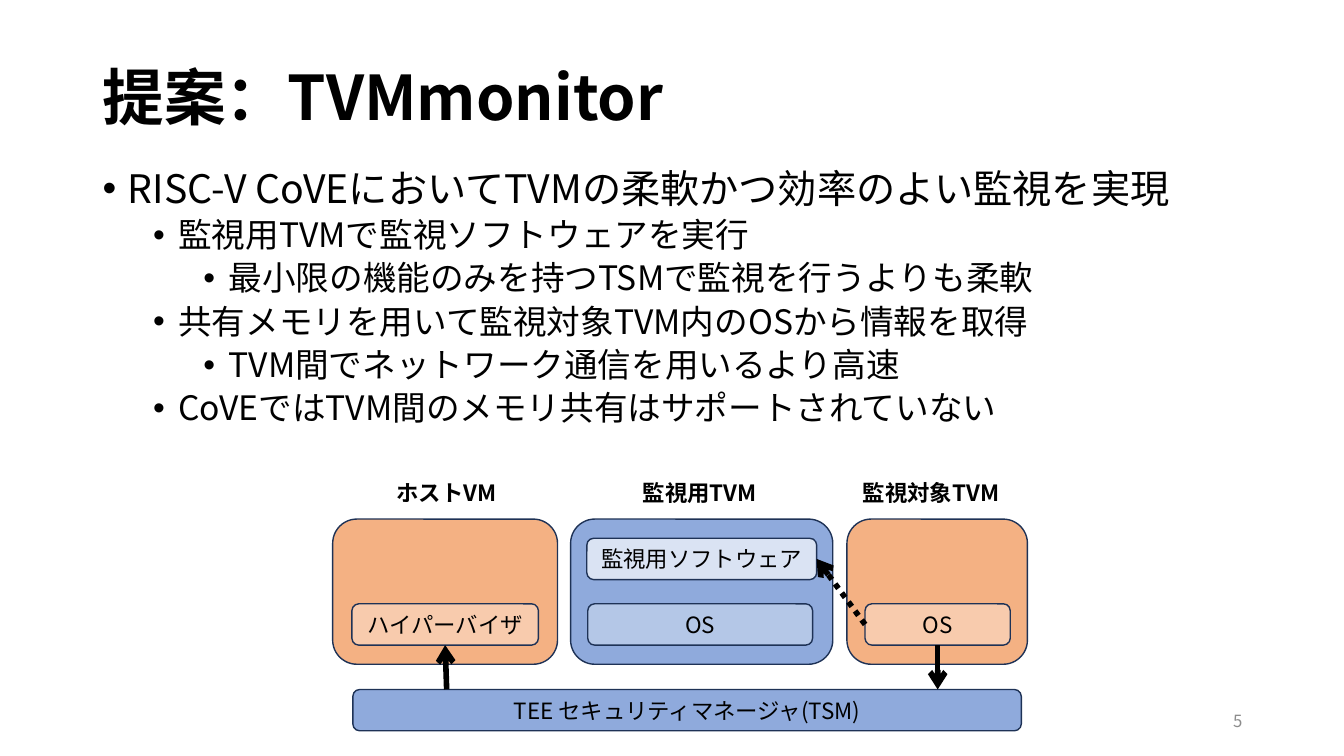
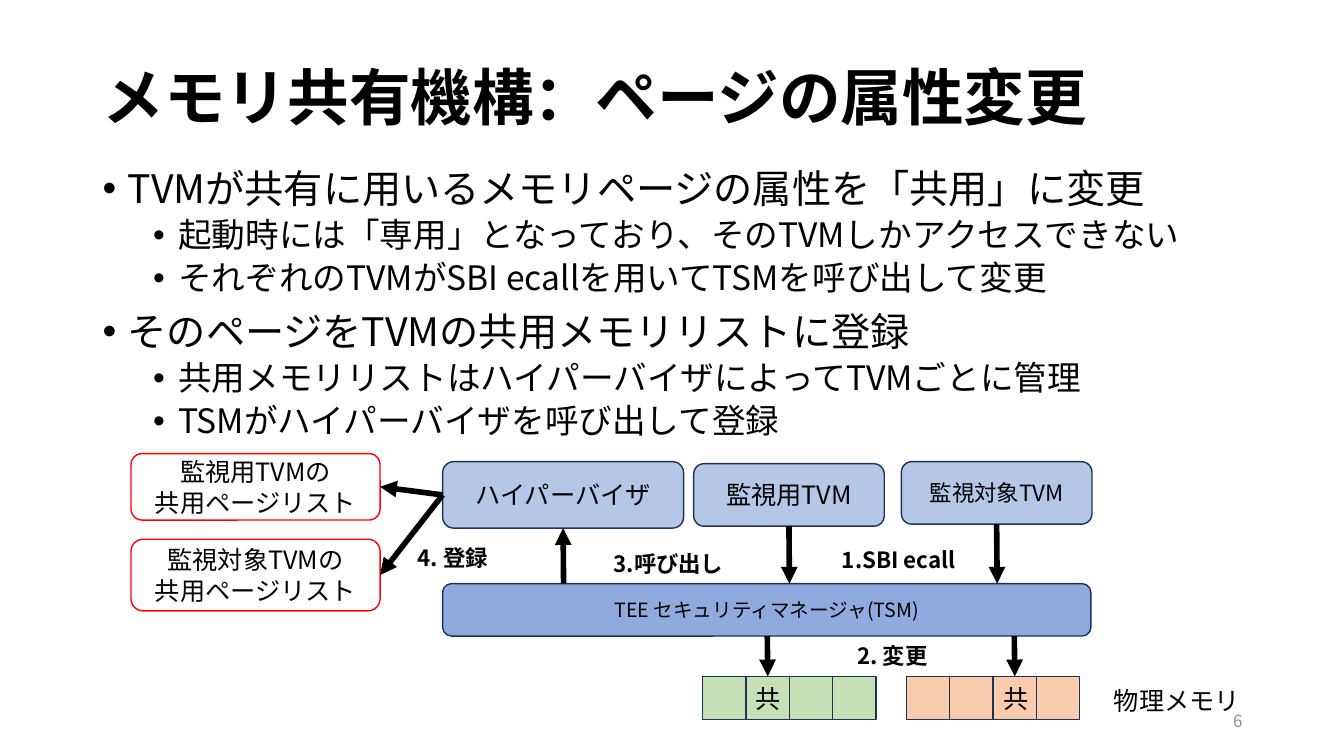
from lxml.etree import SubElement
from pptx import Presentation
from pptx.dml.color import RGBColor
from pptx.enum.dml import MSO_LINE_DASH_STYLE as DASH
from pptx.enum.shapes import MSO_CONNECTOR as CONNECTOR, MSO_SHAPE as SHAPE
from pptx.enum.text import MSO_ANCHOR as ANCHOR, PP_ALIGN as ALIGN
from pptx.oxml.ns import qn
from pptx.util import Inches, Pt

TOP, LEFT, BOTTOM, RIGHT = range(4)  # connection sites of a rectangle


def color(value):
    return RGBColor.from_string(value)


class Deck:
    FONT = "Noto Sans CJK JP"
    BLACK, GRAY, WHITE, RED, NAVY = "000000", "8C8C8C", "FFFFFF", "FF0000", "1E3256"
    BLUE, LIGHT_BLUE, PALE_BLUE = "8FAADC", "B4C7E7", "DAE3F3"
    ORANGE, LIGHT_ORANGE, GREEN = "F4B183", "F8CBAD", "C5E0B4"
    BODY_LEVELS = [(28, 10), (24, 5), (24, 5)]  # size, space before

    def __init__(self):
        self.presentation = Presentation()
        self.presentation.slide_width = Inches(13.33)
        self.presentation.slide_height = Inches(7.5)
        self.slide = None

    def new_slide(self, title, body, number):
        """Start a slide with its title, bullets and page number."""
        layout = self.presentation.slide_layouts[6]
        self.slide = self.presentation.slides.add_slide(layout)
        heading = self.text((0.92, 0.56, 11.5, 0.88), title, 44, bold=True,
                            align=ALIGN.LEFT, anchor=ANCHOR.MIDDLE)
        heading.text_frame.paragraphs[0].line_spacing = 0.9
        self.bullets(body)
        self.text((9.42, 6.95, 3, 0.4), str(number), 12, fill=self.GRAY,
                  align=ALIGN.RIGHT, anchor=ANCHOR.MIDDLE)

    def style(self, paragraph, size, bold, fill):
        values = {"name": self.FONT, "size": Pt(size), "bold": bold}
        for run in paragraph.runs:
            for name, value in values.items():
                setattr(run.font, name, value)
            run.font.color.rgb = color(fill)
            SubElement(run._r.get_or_add_rPr(), qn("a:ea"), typeface=self.FONT)

    def set_text(self, shape, content, size, bold=False, fill=BLACK,
                 align=ALIGN.CENTER, anchor=ANCHOR.MIDDLE):
        frame = shape.text_frame
        for name, value in {"text": content, "word_wrap": True,
                            "vertical_anchor": anchor}.items():
            setattr(frame, name, value)
        for paragraph in frame.paragraphs:
            paragraph.alignment = align
            self.style(paragraph, size, bold, fill)

    def text(self, box, content, size=16, anchor=ANCHOR.TOP, **format_values):
        shape = self.slide.shapes.add_textbox(*map(Inches, box))
        self.set_text(shape, content, size, anchor=anchor, **format_values)
        return shape

    def label(self, box, content):
        return self.text(box, content, bold=True)

    def bullets(self, items):
        """Add (level, text) pairs as a bulleted outline."""
        shape = self.text((0.92, 1.63, 11.5, 5.12),
                          "\n".join(content for _, content in items),
                          align=ALIGN.LEFT)
        for paragraph, (level, _) in zip(shape.text_frame.paragraphs, items):
            size, space = self.BODY_LEVELS[level]
            for name, value in {"level": level, "line_spacing": 0.9,
                                "space_before": Pt(space)}.items():
                setattr(paragraph, name, value)
            for run in paragraph.runs:
                run.font.size = Pt(size)
            properties = paragraph._p.get_or_add_pPr()
            properties.set("marL", str(Inches(0.25 + 0.5 * level)))
            properties.set("indent", str(Inches(-0.25)))
            SubElement(properties, qn("a:buFont"), typeface="Arial")
            SubElement(properties, qn("a:buChar"), char="•")

    def box(self, box, fill, content="", size=16, line=NAVY,
            kind=SHAPE.ROUNDED_RECTANGLE):
        shape = self.slide.shapes.add_shape(kind, *map(Inches, box))
        shape.shadow.inherit = False
        shape.fill.solid()
        shape.fill.fore_color.rgb = color(fill)
        shape.line.color.rgb = color(line)
        shape.line.width = Pt(1)
        if content:
            self.set_text(shape, content, size)
        return shape

    def point(self, end):
        """Position of an (x, y) pair in inches or a (shape, site) pair."""
        first, second = end
        if isinstance(first, (int, float)):
            return Inches(first), Inches(second)
        middle_x = first.left + first.width // 2
        middle_y = first.top + first.height // 2
        return {TOP: (middle_x, first.top),
                LEFT: (first.left, middle_y),
                BOTTOM: (middle_x, first.top + first.height),
                RIGHT: (first.left + first.width, middle_y)}[second]

    def arrow(self, start, end, head="triangle", dash=None):
        connector = self.slide.shapes.add_connector(
            CONNECTOR.STRAIGHT, *self.point(start), *self.point(end))
        for pair, connect in ((start, connector.begin_connect),
                              (end, connector.end_connect)):
            if not isinstance(pair[0], (int, float)):
                connect(*pair)
        line = connector.line
        line.color.rgb = color(self.BLACK)
        line.width = Pt(4)
        if dash:
            line.dash_style = dash
        properties = connector._element.spPr
        SubElement(properties.find(qn("a:ln")), qn("a:tailEnd"), type=head)
        SubElement(properties, qn("a:effectLst"))

    def memory(self, left, fill, shared):
        """Draw four pages in a row and return the shared one."""
        side = 0.43
        pages = [self.box((left + side * index, 6.71, side, side), fill,
                          "共" if index == shared else "", 18,
                          kind=SHAPE.RECTANGLE) for index in range(4)]
        return pages[shared]


def proposal(deck):
    deck.new_slide("提案：TVMmonitor", [
        (0, "RISC-V CoVEにおいてTVMの柔軟かつ効率のよい監視を実現"),
        (1, "監視用TVMで監視ソフトウェアを実行"),
        (2, "最小限の機能のみを持つTSMで監視を行うよりも柔軟"),
        (1, "共有メモリを用いて監視対象TVM内のOSから情報を取得"),
        (2, "TVM間でネットワーク通信を用いるより高速"),
        (1, "CoVEではTVM間のメモリ共有はサポートされていない"),
    ], 5)

    # Virtual machines and the security manager
    deck.box((3.5, 6.84, 6.63, 0.41), deck.BLUE, "TEE セキュリティマネージャ(TSM)")
    for left, width, fill, label_left, label_width, name in (
            (3.3, 2.23, deck.ORANGE, 3.38, 2.1, "ホストVM"),
            (5.66, 2.6, deck.BLUE, 6.25, 1.38, "監視用TVM"),
            (8.4, 1.79, deck.ORANGE, 8.2, 2.07, "監視対象TVM")):
        deck.box((left, 5.15, width, 1.44), fill)
        deck.label((label_left, 4.7, label_width, 0.37), name)

    # Software inside the machines
    hypervisor, software, _, target_os = [
        deck.box((left, top, width, 0.41), fill, name)
        for left, top, width, fill, name in (
            (3.49, 5.99, 1.85, deck.LIGHT_ORANGE, "ハイパーバイザ"),
            (5.82, 5.34, 2.28, deck.PALE_BLUE, "監視用ソフトウェア"),
            (5.83, 5.99, 2.23, deck.LIGHT_BLUE, "OS"),
            (8.58, 5.99, 1.44, deck.LIGHT_ORANGE, "OS"))]

    # Calls and monitoring
    deck.arrow((target_os, LEFT), (software, RIGHT), "arrow", DASH.ROUND_DOT)
    deck.arrow((target_os, BOTTOM), (9.3, 6.84), "arrow")
    deck.arrow((4.43, 6.84), (hypervisor, BOTTOM), "arrow")


def page_attributes(deck):
    deck.new_slide("メモリ共有機構：ページの属性変更", [
        (0, "TVMが共有に用いるメモリページの属性を「共用」に変更"),
        (1, "起動時には「専用」となっており、そのTVMしかアクセスできない"),
        (1, "それぞれのTVMがSBI ecallを用いてTSMを呼び出して変更"),
        (0, "そのページをTVMの共用メモリリストに登録"),
        (1, "共用メモリリストはハイパーバイザによってTVMごとに管理"),
        (1, "TSMがハイパーバイザを呼び出して登録"),
    ], 6)

    # Hypervisor, machines and the security manager
    hypervisor = deck.box((4.39, 4.58, 2.39, 0.66), deck.LIGHT_BLUE, "ハイパーバイザ", 18)
    monitor = deck.box((6.88, 4.6, 1.89, 0.62), deck.LIGHT_BLUE, "監視用TVM", 18)
    target = deck.box((8.94, 4.58, 1.89, 0.62), deck.LIGHT_BLUE, "監視対象TVM", 16)
    deck.box((4.39, 5.79, 6.43, 0.52), deck.BLUE, "TEE セキュリティマネージャ(TSM)", 14)
    for machine, x in ((monitor, 7.83), (target, 9.89)):
        deck.arrow((machine, BOTTOM), (x, 5.79))
    deck.arrow((5.59, 5.79), (hypervisor, BOTTOM))

    # Shared page lists
    for top, height, name in ((4.5, 0.66, "監視用TVM"), (5.35, 0.71, "監視対象TVM")):
        page_list = deck.box((1.3, top, 2.47, height), deck.WHITE,
                             f"{name}の\n共用ページリスト", 18, deck.RED)
        deck.arrow((hypervisor, LEFT), (page_list, RIGHT))

    # Physical memory
    for left, fill, shared, x in ((6.97, deck.GREEN, 1, 7.61),
                                  (8.99, deck.LIGHT_ORANGE, 2, 10.06)):
        page = deck.memory(left, fill, shared)
        deck.arrow((x, 6.31), (page, TOP))
    deck.text((10.95, 6.75, 1.46, 0.4), "物理メモリ", 18, align=ALIGN.LEFT)

    # Step labels
    for left, top, width, name in ((8.19, 5.37, 1.45, "1.SBI ecall"),
                                   (8.21, 6.32, 1.28, "2. 変更"),
                                   (5.89, 5.41, 1.48, "3.呼び出し"),
                                   (3.85, 5.35, 1.28, "4. 登録")):
        deck.label((left, top, width, 0.37), name)


def main():
    deck = Deck()
    proposal(deck)
    page_attributes(deck)
    deck.presentation.save("out.pptx")


if __name__ == "__main__":
    main()
